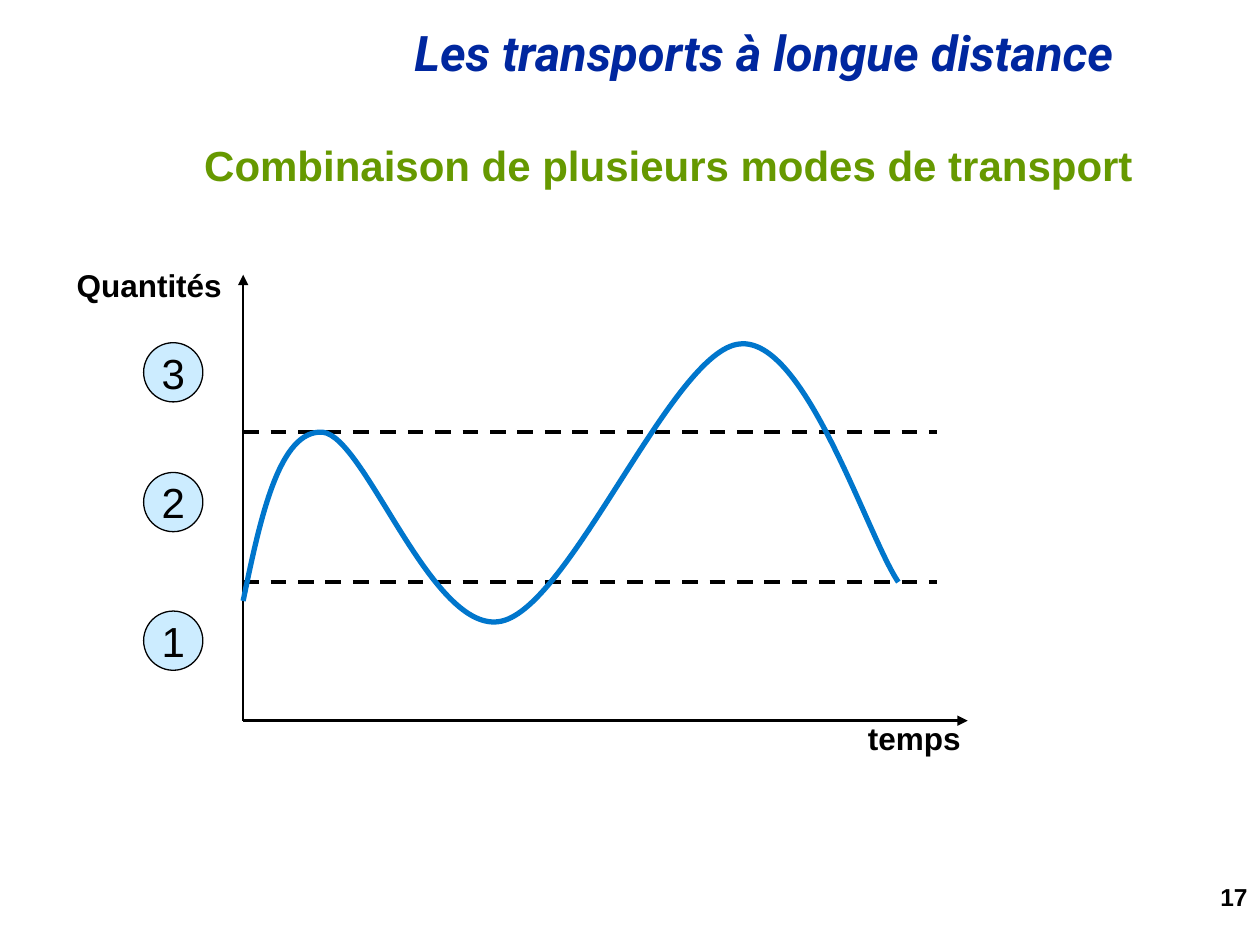
from lxml import etree
from pptx import Presentation
from pptx.dml.color import RGBColor
from pptx.enum.dml import MSO_LINE
from pptx.enum.shapes import MSO_CONNECTOR, MSO_SHAPE
from pptx.enum.text import MSO_ANCHOR, PP_ALIGN
from pptx.oxml.ns import qn
from pptx.util import Inches, Pt

DASH = MSO_LINE.DASH
STRAIGHT = MSO_CONNECTOR.STRAIGHT
OVAL = MSO_SHAPE.OVAL
MIDDLE = MSO_ANCHOR.MIDDLE
LEFT, CENTER, RIGHT = PP_ALIGN.LEFT, PP_ALIGN.CENTER, PP_ALIGN.RIGHT
rgb = RGBColor.from_string

prs = Presentation()
prs.slide_width, prs.slide_height = Inches(10), Inches(7.5)
s = prs.slides.add_slide(prs.slide_layouts[6])
cell = prs.slide_width / 100


def grid(*cells):
    return [round(c * cell) for c in cells]


def write(sp, text, size, color, align, bold=True, italic=False, font="Arial", wrap=True):
    tf = sp.text_frame
    tf.text = text
    tf.word_wrap = wrap
    p = tf.paragraphs[0]
    p.alignment = align
    p.line_spacing = 0.9 if bold else 1.0
    f = p.runs[0].font
    f.name, f.size, f.bold, f.italic = font, Pt(size), bold, italic
    f.color.rgb = rgb(color)
    return tf


x0, base, low, high = 19.3, 57.2, 46.2, 34.3

sp = s.shapes.add_textbox(*grid(31.9, 1.8, 68.1, 5.2))
write(sp, "Les transports à longue distance", 28, "00279F", LEFT, italic=True, font="Roboto")

for x, y, width, arrow in [
    (x0, 21.8, 1.5, True),
    (76.8, base, 1.5, True),
    (74.4, low, 2.25, False),
    (74.4, high, 2.25, False),
]:
    start = y if not arrow else base
    line = s.shapes.add_connector(STRAIGHT, *grid(x0, start, x, y))
    line.line.color.rgb = rgb("000000")
    line.line.width = Pt(width)
    if arrow:
        etree.SubElement(line.line._get_or_add_ln(), qn("a:tailEnd"), type="triangle")
    else:
        line.line.dash_style = DASH
    etree.SubElement(line._element.spPr, qn("a:effectLst"))

curve = [
    (20.7, 40.9), (22.2, 34.1), (25.6, 34.3),
    (29.0, 34.6), (34.3, 50.5), (39.8, 49.3),
    (45.3, 48.1), (53.4, 27.8), (58.7, 27.3),
    (63.9, 26.7), (68.8, 42.5), (71.3, 46.2),
]
fb = s.shapes.build_freeform(*grid(x0, 47.7))
fb.add_line_segments([grid(*pt) for pt in curve], close=False)
sp = fb.convert_to_shape()
sp.shadow.inherit = False
sp.fill.background()
sp.line.color.rgb = rgb("0076CC")
sp.line.width = Pt(3)
segments = list(sp._element.iter(qn("a:lnTo")))
for i in range(0, len(segments), 3):
    bezier = etree.Element(qn("a:cubicBezTo"))
    segments[i].addprevious(bezier)
    for segment in segments[i:i + 3]:
        bezier.append(segment[0])
        segment.getparent().remove(segment)

for label, top in [("1", 48.5), ("2", 37.5), ("3", 27.2)]:
    sp = s.shapes.add_shape(OVAL, *grid(11.4, top, 4.7, 4.7))
    sp.shadow.inherit = False
    sp.fill.solid()
    sp.fill.fore_color.rgb = rgb("CCECFF")
    sp.line.color.rgb = rgb("000000")
    sp.line.width = Pt(0.75)
    tf = write(sp, label, 24, "000000", CENTER, bold=False, wrap=False)
    tf.vertical_anchor = MIDDLE

sp = s.shapes.add_textbox(*grid(11.7, 10.8, 79.2, 5))
tf = write(sp, "Combinaison de plusieurs modes de transport", 24, "669900", RIGHT)
tf.vertical_anchor = MIDDLE

for text, box, size, align, wrap in [
    ("temps", (67.9, 56.9, 9.4, 3.7), 18, LEFT, False),
    ("Quantités", (5.1, 21, 13.5, 3.7), 18, LEFT, False),
    ("17", (77.5, 69.8, 22.5, 4), 14, RIGHT, True),
]:
    sp = s.shapes.add_textbox(*grid(*box))
    write(sp, text, size, "000000", align, wrap=wrap)

prs.save("out.pptx")
